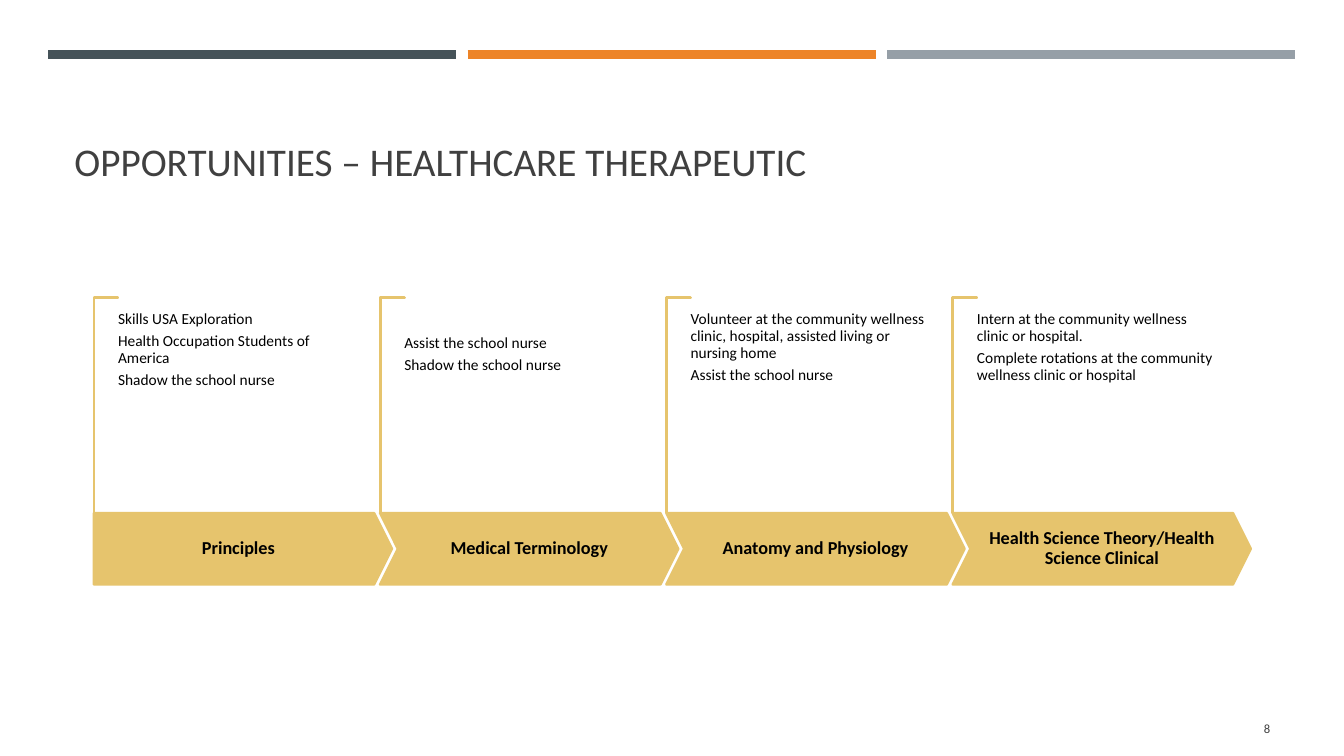
"""Build the healthcare therapeutic opportunities slide."""
import pptx
import pptx.util
import pptx.dml.color
import pptx.enum.shapes
import pptx.enum.text
import pptx.oxml.ns
import lxml.etree

Pt = pptx.util.Pt
RGB = pptx.dml.color.RGBColor
SHAPE = pptx.enum.shapes.MSO_SHAPE
ANCHOR = pptx.enum.text.MSO_ANCHOR
ALIGN = pptx.enum.text.PP_ALIGN

SLATE = RGB(0x46, 0x53, 0x59)
ORANGE = RGB(0xED, 0x84, 0x28)
GREY = RGB(0x96, 0x9F, 0xA7)
GOLD = RGB(0xE6, 0xC4, 0x6D)
DARK = RGB(0x40, 0x40, 0x40)
BLACK = RGB(0, 0, 0)
WHITE = RGB(255, 255, 255)

LEFT, PITCH = 67, 204.5
BRACKET_W, BRACKET_H, BRACKET_TOP = 17.3, 154, 212.5
ARROW_W, ARROW_H, ARROW_TOP = 213, 51, 366.5
TEXT_TOP, TEXT_W, TEXT_H = 222.5, 173, 134

COURSES = [
    ("Principles", 0, [
        "Skills USA Exploration",
        "Health Occupation Students of America",
        "Shadow the school nurse"]),
    ("Medical Terminology", 17, [
        "Assist the school nurse",
        "Shadow the school nurse"]),
    ("Anatomy and Physiology", 0, [
        "Volunteer at the community wellness clinic, hospital, assisted living or nursing home",
        "Assist the school nurse"]),
    ("Health Science Theory/Health Science Clinical", 0, [
        "Intern at the community wellness clinic or hospital.",
        "Complete rotations at the community wellness clinic or hospital"]),
]


def add_run(p, text, size, color, bold=False):
    r = p.add_run()
    r.text = text
    r.font.name = "Calibri"
    r.font.size = Pt(size)
    r.font.bold = bold
    r.font.color.rgb = color


def add_gold_shape(kind, x, y, w, h, fill):
    sp = s.shapes.add_shape(kind, Pt(x), Pt(y), Pt(w), Pt(h))
    sp.shadow.inherit = False
    sp.fill.solid()
    sp.fill.fore_color.rgb = fill
    sp.line.color.rgb = GOLD
    sp.line.width = Pt(1.75)
    return sp


prs = pptx.Presentation()
prs.slide_width, prs.slide_height = Pt(960), Pt(540)
s = prs.slides.add_slide(prs.slide_layouts[5])

for i, color in enumerate([SLATE, ORANGE, GREY]):
    x = 34.4 + i * 299.6
    bar = s.shapes.add_connector(
        pptx.enum.shapes.MSO_CONNECTOR.STRAIGHT, Pt(x), Pt(39), Pt(x + 291.6), Pt(39))
    bar.line.color.rgb = color
    bar.line.width = Pt(6.5)
    lxml.etree.SubElement(bar.element.spPr, pptx.oxml.ns.qn("a:effectLst"))

title = s.shapes.title
title.left, title.top, title.width, title.height = Pt(46), Pt(57.6), Pt(868), Pt(77.8)
tf = title.text_frame
tf.auto_size = pptx.enum.text.MSO_AUTO_SIZE.NONE
tf.vertical_anchor = ANCHOR.BOTTOM
p = tf.paragraphs[0]
p.alignment = ALIGN.LEFT
add_run(p, "OPPORTUNITIES – HEALTHCARE THERAPEUTIC", 28, DARK)

number = s.shapes.add_textbox(Pt(831.6), Pt(506.2), Pt(82.8), Pt(28.8))
tf = number.text_frame
tf.word_wrap = True
tf.vertical_anchor = ANCHOR.MIDDLE
p = tf.paragraphs[0]
p.alignment = ALIGN.RIGHT
add_run(p, "8", 9, DARK)

for i, (course, offset, activities) in enumerate(COURSES):
    x = LEFT + i * PITCH

    bracket = add_gold_shape(
        SHAPE.CORNER, x + (BRACKET_W - BRACKET_H) / 2,
        BRACKET_TOP + (BRACKET_H - BRACKET_W) / 2, BRACKET_H, BRACKET_W, WHITE)
    bracket.rotation = 90
    bracket.adjustments[0] = bracket.adjustments[1] = 0.01

    arrow = add_gold_shape(
        SHAPE.CHEVRON if i else SHAPE.PENTAGON, x, ARROW_TOP, ARROW_W, ARROW_H, GOLD)
    arrow.adjustments[0] = 0.25
    tf = arrow.text_frame
    tf.word_wrap = True
    tf.vertical_anchor = ANCHOR.MIDDLE
    tf.margin_left = tf.margin_right = Pt(6.5)
    tf.margin_top = tf.margin_bottom = Pt(6.5)
    p = tf.paragraphs[0]
    p.alignment = ALIGN.CENTER
    p.line_spacing = 0.9
    add_run(p, course, 13, BLACK, True)

    box = s.shapes.add_textbox(
        Pt(x + BRACKET_W), Pt(TEXT_TOP + offset), Pt(TEXT_W), Pt(TEXT_H - offset))
    tf = box.text_frame
    tf.word_wrap = True
    tf.margin_left = tf.margin_right = tf.margin_top = tf.margin_bottom = 0
    for j, activity in enumerate(activities):
        p = tf.add_paragraph() if j else tf.paragraphs[0]
        p.line_spacing = 0.9
        p.space_after = Pt(3.85)
        add_run(p, activity, 11, BLACK)

prs.save("out.pptx")
